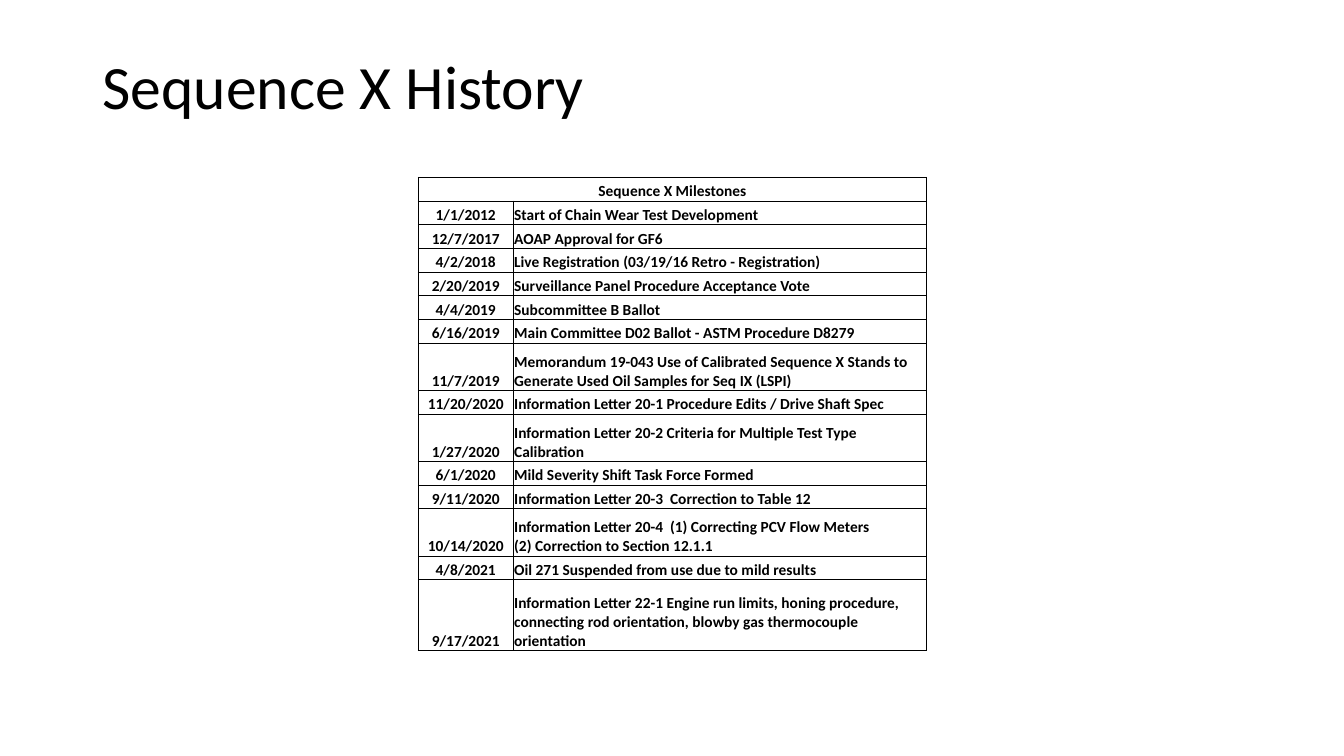
import pptx
import pptx.util
import pptx.dml.color
import pptx.enum.text
import pptx.oxml
import pptx.oxml.ns
from pptx.util import Inches

# Content
TITLE = "Sequence X History"
TABLE_HEADING = "Sequence X Milestones"
# date, milestone, height in text lines
MILESTONES = [
    ("1/1/2012", "Start of Chain Wear Test Development", 1),
    ("12/7/2017", "AOAP Approval for GF6", 1),
    ("4/2/2018", "Live Registration (03/19/16 Retro - Registration)", 1),
    ("2/20/2019", "Surveillance Panel Procedure Acceptance Vote", 1),
    ("4/4/2019", "Subcommittee B Ballot", 1),
    ("6/16/2019", "Main Committee D02 Ballot - ASTM Procedure D8279", 1),
    ("11/7/2019", "Memorandum 19-043 Use of Calibrated Sequence X Stands to "
                  "Generate Used Oil Samples for Seq IX (LSPI)", 2),
    ("11/20/2020", "Information Letter 20-1 Procedure Edits / Drive Shaft Spec", 1),
    ("1/27/2020", "Information Letter 20-2 Criteria for Multiple Test Type Calibration", 2),
    ("6/1/2020", "Mild Severity Shift Task Force Formed", 1),
    ("9/11/2020", "Information Letter 20-3  Correction to Table 12", 1),
    ("10/14/2020", "Information Letter 20-4  (1) Correcting PCV Flow Meters\n"
                   "(2) Correction to Section 12.1.1", 2),
    ("4/8/2021", "Oil 271 Suspended from use due to mild results", 1),
    ("9/17/2021", "Information Letter 22-1 Engine run limits, honing procedure, "
                  "connecting rod orientation, blowby gas thermocouple orientation", 3),
]

THEME = {
    "font": "Calibri", "ink": "000000",
    "title_size": 44, "table_size": 11,
    "outer_line": 1, "inner_line": 0.5,
}
TITLE_BOX = (0.92, 0.4, 11.5, 0.98)
TABLE_LEFT, TABLE_TOP, TABLE_HEIGHT = 4.15, 1.76, 4.7
COLUMN_WIDTHS = (0.94, 4.1)

ALIGN = pptx.enum.text.PP_ALIGN
ANCHOR = pptx.enum.text.MSO_ANCHOR


def write_text(frame, text, size, bold=False, align=ALIGN.LEFT, spacing=None):
    frame.word_wrap = True
    frame.text = text
    for para in frame.paragraphs:
        para.alignment = align
        if spacing:
            para.line_spacing = spacing
        for span in para.runs:
            span.font.name = THEME["font"]
            span.font.size = pptx.util.Pt(size)
            span.font.bold = bold
            span.font.color.rgb = pptx.dml.color.RGBColor.from_string(THEME["ink"])


def draw_borders(cell, widths):
    """Add left, right, top and bottom lines, given in points."""
    properties = cell._tc.get_or_add_tcPr()
    for place, (side, width) in enumerate(zip("LRTB", widths)):
        line = pptx.oxml.parse_xml(
            f'<a:ln{side} {pptx.oxml.ns.nsdecls("a")} w="{pptx.util.Pt(width)}">'
            f'<a:solidFill><a:srgbClr val="{THEME["ink"]}"/></a:solidFill>'
            f'<a:prstDash val="solid"/></a:ln{side}>')
        properties.insert(place, line)


def format_cell(cell, text, align, widths):
    cell.margin_left = cell.margin_right = cell.margin_top = Inches(0.01)
    cell.margin_bottom = 0
    cell.vertical_anchor = ANCHOR.BOTTOM
    cell.fill.background()
    draw_borders(cell, widths)
    write_text(cell.text_frame, text, THEME["table_size"], bold=True, align=align)


def add_title(page):
    box = page.shapes.add_textbox(*map(Inches, TITLE_BOX))
    box.text_frame.vertical_anchor = ANCHOR.MIDDLE
    write_text(box.text_frame, TITLE, THEME["title_size"], spacing=0.9)


def add_milestones(page):
    rows = [(TABLE_HEADING, "", 1)] + MILESTONES
    line_height = TABLE_HEIGHT / sum(lines for _, _, lines in rows)
    table = page.shapes.add_table(
        len(rows), len(COLUMN_WIDTHS), Inches(TABLE_LEFT), Inches(TABLE_TOP),
        Inches(sum(COLUMN_WIDTHS)), Inches(TABLE_HEIGHT)).table
    table.first_row = table.horz_banding = False
    for column, width in zip(table.columns, COLUMN_WIDTHS):
        column.width = Inches(width)

    outer, inner = THEME["outer_line"], THEME["inner_line"]
    for index, (date, milestone, lines) in enumerate(rows):
        table.rows[index].height = Inches(line_height * lines)
        top = outer if index == 0 else inner
        bottom = outer if index == len(rows) - 1 else inner
        format_cell(table.cell(index, 0), date, ALIGN.CENTER, (outer, inner, top, bottom))
        format_cell(table.cell(index, 1), milestone, ALIGN.LEFT, (inner, outer, top, bottom))
    table.cell(0, 0).merge(table.cell(0, 1))


def main():
    deck = pptx.Presentation()
    deck.slide_width, deck.slide_height = Inches(13.33), Inches(7.5)
    page = deck.slides.add_slide(deck.slide_layouts[6])
    add_title(page)
    add_milestones(page)
    deck.save("out.pptx")


if __name__ == "__main__":
    main()
